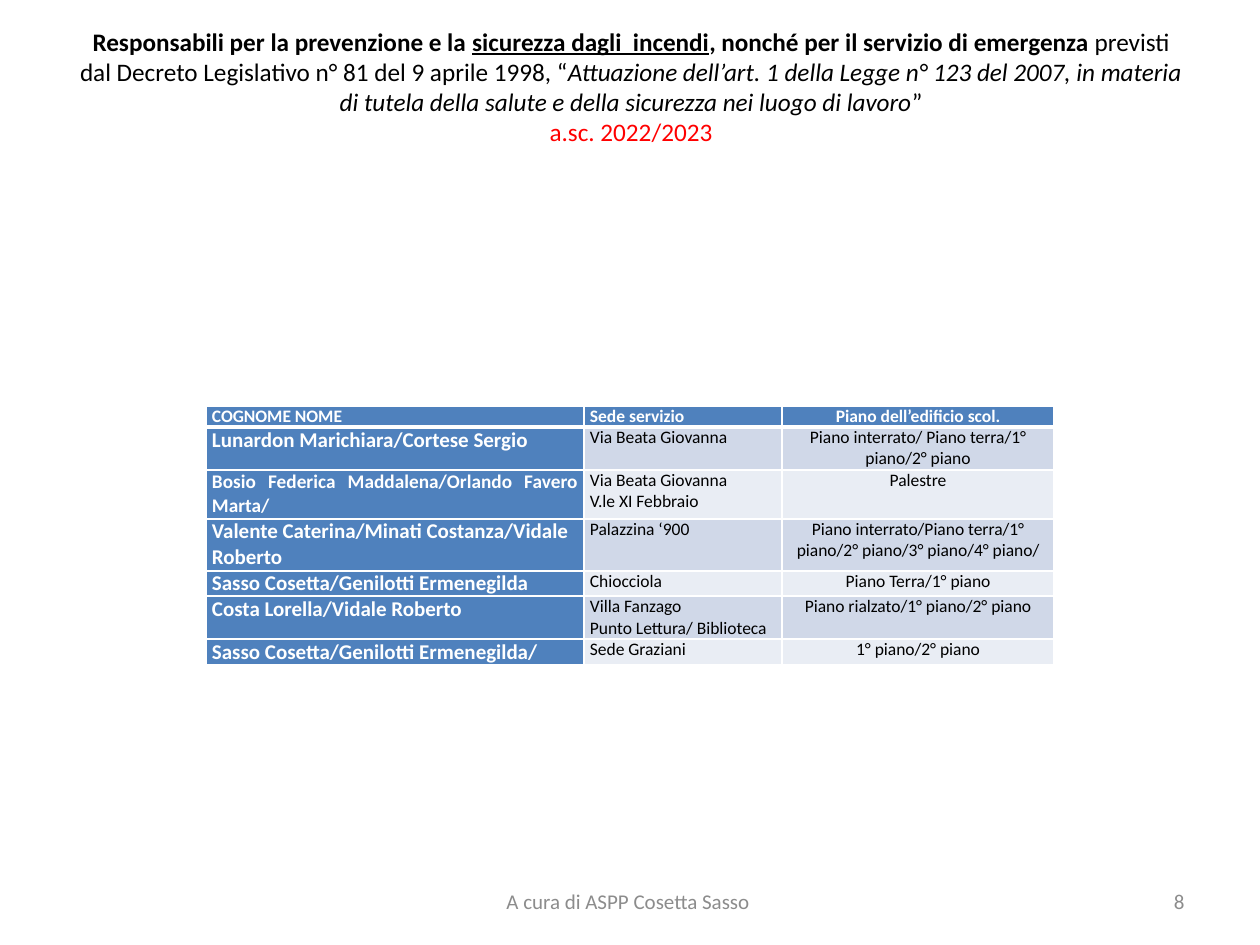
from lxml import etree
from pptx import Presentation
from pptx.dml.color import RGBColor
from pptx.enum.text import MSO_ANCHOR, PP_ALIGN
from pptx.oxml.ns import qn
from pptx.util import Pt

LEFT, MID, RIGHT, JUST = PP_ALIGN.LEFT, PP_ALIGN.CENTER, PP_ALIGN.RIGHT, PP_ALIGN.JUSTIFY
CENTRE, BOTTOM = MSO_ANCHOR.MIDDLE, MSO_ANCHOR.BOTTOM
SCALE = 914400 / 126
BLACK, WHITE, GREY, RED = "000000", "FFFFFF", "8C8C8C", "FF0000"
BLUE, BANDS = "4F81BD", ("E9EDF4", "D0D8E8")

TITLE = [
    ("Responsabili per la prevenzione e la ", {"bold": True}),
    ("sicurezza dagli  incendi", {"bold": True, "underline": True}),
    (", nonché per il servizio di emergenza ", {"bold": True}),
    ("previsti dal Decreto Legislativo n° 81 del 9 aprile 1998, “", {}),
    ("Attuazione dell’art. 1 della Legge n° 123 del 2007, in materia di tutela "
     "della salute e della sicurezza nei luogo di lavoro", {"italic": True}),
    ("”", {}),
    ("\n", {}),
    ("a.sc. 2022/2023", {"color": RED}),
]
HEAD = ["COGNOME NOME", "Sede servizio", "Piano dell’edificio scol."]
ROWS = [
    ("Lunardon Marichiara/Cortese Sergio", "Via Beata Giovanna",
     "Piano interrato/ Piano terra/1° piano/2° piano"),
    ("Bosio Federica Maddalena/Orlando Favero Marta/",
     "Via Beata Giovanna\nV.le XI Febbraio", "Palestre"),
    ("Valente Caterina/Minati Costanza/Vidale Roberto", "Palazzina ‘900",
     "Piano interrato/Piano terra/1° piano/2° piano/3° piano/4° piano/"),
    ("Sasso Cosetta/Genilotti Ermenegilda", "Chiocciola", "Piano Terra/1° piano"),
    ("Costa Lorella/Vidale Roberto", "Villa Fanzago\nPunto Lettura/ Biblioteca",
     "Piano rialzato/1° piano/2° piano"),
    ("Sasso Cosetta/Genilotti Ermenegilda/", "Sede Graziani", "1° piano/2° piano"),
]
WIDTHS = [378, 198, 272]
HEIGHTS = [21, 43, 49, 52, 25, 43, 26]


def px(num):
    """Turn pixels into EMU."""
    return round(num * SCALE)


def rgb(code):
    """Turn a hex string into a colour."""
    return RGBColor.from_string(code)


class Deck:
    """Holds the style and the current slide."""

    font = "Calibri"

    def __init__(self):
        """Open a deck with one title-only slide."""
        self.prs = Presentation()
        self.prs.slide_width, self.prs.slide_height = px(1260), px(945)
        self.slide = self.prs.slides.add_slide(self.prs.slide_layouts[5])

    def style(self, font, size, color=BLACK, **form):
        """Set font values."""
        font.color.rgb = rgb(color)
        for key, val in {"name": self.font, "size": Pt(size), "bold": False, **form}.items():
            setattr(font, key, val)

    def frame(self, box, anchor, **form):
        """Set frame values."""
        for key, val in {"word_wrap": True, "vertical_anchor": anchor, **form}.items():
            setattr(box.text_frame, key, val)

    def title(self, place, runs, size):
        """Fill and place the title."""
        box = self.slide.shapes.title
        box.left, box.top, box.width, box.height = map(px, place)
        self.frame(box, BOTTOM, margin_bottom=px(8))
        para = box.text_frame.paragraphs[0]
        para.alignment = MID
        for text, form in runs:
            if text == "\n":
                para.add_line_break()
                continue
            run = para.add_run()
            run.text = text
            self.style(run.font, size, **form)

    def label(self, place, text, align):
        """Add a footer text."""
        box = self.slide.shapes.add_textbox(*map(px, place))
        self.frame(box, CENTRE)
        para = box.text_frame.paragraphs[0]
        para.alignment = align
        run = para.add_run()
        run.text = text
        self.style(run.font, 12, GREY)

    def edge(self, cell, sides):
        """Draw white cell borders."""
        props = cell._tc.get_or_add_tcPr()
        for side, wide in sides.items():
            line = etree.SubElement(props, qn(f"a:ln{side}"), w=str(Pt(wide)))
            fill = etree.SubElement(line, qn("a:solidFill"))
            etree.SubElement(fill, qn("a:srgbClr"), val=WHITE)

    def cell(self, cell, text, fill, align, sides, **form):
        """Fill one table cell."""
        side = px(6)
        for key, val in {"text": text, "margin_left": side, "margin_right": side,
                         "margin_top": 0, "margin_bottom": 0}.items():
            setattr(cell, key, val)
        self.edge(cell, sides)
        cell.fill.solid()
        cell.fill.fore_color.rgb = rgb(fill)
        for para in cell.text_frame.paragraphs:
            para.alignment = align
            for run in para.runs:
                self.style(run.font, **form)

    def table(self, left, top, rows):
        """Add the table of staff, sites and floors."""
        place = map(px, (left, top, sum(WIDTHS), sum(HEIGHTS)))
        grid = self.slide.shapes.add_table(len(rows), len(WIDTHS), *place).table
        for col, wide in zip(grid.columns, WIDTHS):
            col.width = px(wide)
        for r, (row, high) in enumerate(zip(rows, HEIGHTS)):
            grid.rows[r].height = px(high)
            sides = {"L": 1, "R": 1, "T": 3 if r == 1 else 1, "B": 3 if r == 0 else 1}
            for c, text in enumerate(row):
                dark = r == 0 or c == 0
                size = 10 if r == 0 or c else 11 if r == 2 else 12
                align = MID if c == 2 else LEFT if c == 0 and r > 2 else JUST
                self.cell(grid.cell(r, c), text, BLUE if dark else BANDS[r % 2], align,
                          sides, size=size, color=WHITE if dark else BLACK, bold=dark)


def main():
    """Build and save the slide."""
    deck = Deck()
    deck.title((64, 96, 1134, 59), TITLE, 14.4)
    deck.label((903, 876, 294, 50), "8", RIGHT)
    deck.label((431, 876, 399, 50), "A cura di ASPP Cosetta Sasso ", MID)
    deck.table(206, 406, [HEAD, *ROWS])
    deck.prs.save("out.pptx")


if __name__ == "__main__":
    main()
